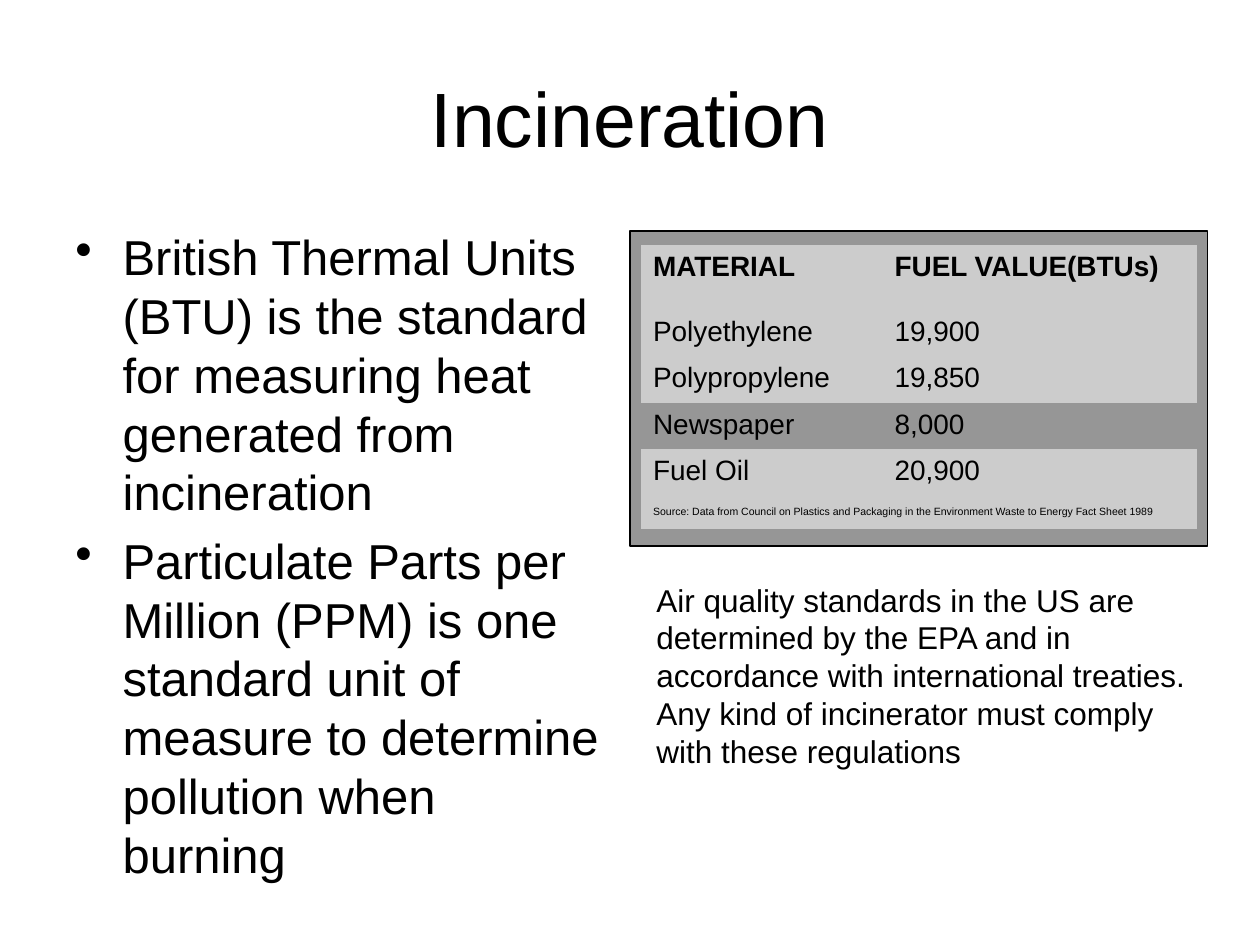
from dataclasses import dataclass

from lxml import etree
from pptx import Presentation
from pptx.dml.color import RGBColor as RGB
from pptx.enum.shapes import MSO_SHAPE as SHAPE
from pptx.enum.text import MSO_ANCHOR as ANCHOR, PP_ALIGN as ALIGN
from pptx.oxml.ns import qn
from pptx.util import Pt


@dataclass(frozen=True)
class Theme:
    font: str = "Arial"
    ink: RGB = RGB(0, 0, 0)
    panel: RGB = RGB(0x96, 0x96, 0x96)
    cell: RGB = RGB(0xCC, 0xCC, 0xCC)
    title: int = 44
    body: int = 28
    note: int = 18
    table: int = 16
    source: int = 6


theme = Theme()


def write(tf, *lines, size, bold=False, align=ALIGN.LEFT, hang=0,
          bullet=None, gap=0, leading=None):
    tf.word_wrap = True
    for i, line in enumerate(lines):
        p = tf.paragraphs[0] if i == 0 else tf.add_paragraph()
        p.alignment = align
        if leading:
            p.line_spacing = Pt(size * leading)
        if i:
            p.space_before = Pt(gap)
        pPr = p._p.get_or_add_pPr()
        pPr.set("marL", str(Pt(hang)))
        pPr.set("indent", str(-Pt(hang)))
        if bullet:
            etree.SubElement(pPr, qn("a:buChar")).set("char", bullet)
        r = p.add_run()
        r.text = line
        r.font.name = theme.font
        r.font.size = Pt(size)
        r.font.bold = bold
        r.font.color.rgb = theme.ink


prs = Presentation()
prs.slide_width, prs.slide_height = Pt(720), Pt(540)
s = prs.slides.add_slide(prs.slide_layouts[6])

panel = s.shapes.add_shape(SHAPE.RECTANGLE, Pt(360), Pt(132), Pt(330), Pt(180))
panel.shadow.inherit = False
panel.fill.solid()
panel.fill.fore_color.rgb = theme.panel
panel.line.color.rgb = theme.ink
panel.line.width = Pt(0.75)

title = s.shapes.add_textbox(Pt(36), Pt(21.6), Pt(648), Pt(90))
title.text_frame.vertical_anchor = ANCHOR.MIDDLE
write(title.text_frame, "Incineration", size=theme.title, align=ALIGN.CENTER, leading=1.2)

body = s.shapes.add_textbox(Pt(36), Pt(126), Pt(318), Pt(356.4))
write(body.text_frame,
      "British Thermal Units (BTU) is the standard for measuring heat generated from incineration",
      "Particulate Parts per Million (PPM) is one standard unit of measure to determine pollution when burning",
      size=theme.body, hang=27, bullet="•", gap=5.6, leading=1.2)

rows = [
    ("MATERIAL", "FUEL VALUE(BTUs)"),
    ("Polyethylene", "19,900"),
    ("Polypropylene", "19,850"),
    ("Newspaper", "8,000"),
    ("Fuel Oil", "20,900"),
    ("Source: Data from Council on Plastics and Packaging in the Environment "
     "Waste to Energy Fact Sheet 1989",),
]
heights = [37.2] + [25.1] * 4 + [19.4]
widths = [138, 180]

frame = s.shapes.add_table(len(rows), len(widths), Pt(366), Pt(140),
                           Pt(sum(widths)), Pt(sum(heights)))
table = frame.table
table.first_row = table.horz_banding = False
style = table._tbl.tblPr.find(qn("a:tableStyleId"))
style.text = "{2D5ABB26-0587-4C30-8999-92F81FD0307C}"
for col, width in zip(table.columns, widths):
    col.width = Pt(width)
for row, height in zip(table.rows, heights):
    row.height = Pt(height)

last = len(rows) - 1
table.cell(last, 0).merge(table.cell(last, 1))
table.cell(last, 0).vertical_anchor = ANCHOR.MIDDLE
for i, values in enumerate(rows):
    for j, value in enumerate(values):
        cell = table.cell(i, j)
        if values[0] == "Newspaper":
            cell.fill.background()
        else:
            cell.fill.solid()
            cell.fill.fore_color.rgb = theme.cell
        write(cell.text_frame, value, bold=i == 0, hang=27,
              size=theme.source if i == last else theme.table)

note = s.shapes.add_textbox(Pt(368), Pt(328.3), Pt(334), Pt(115.2))
write(note.text_frame,
      "Air quality standards in the US are determined by the EPA and in accordance with "
      "international treaties. Any kind of incinerator must comply with these regulations",
      size=theme.note, leading=1.2)

prs.save("out.pptx")
